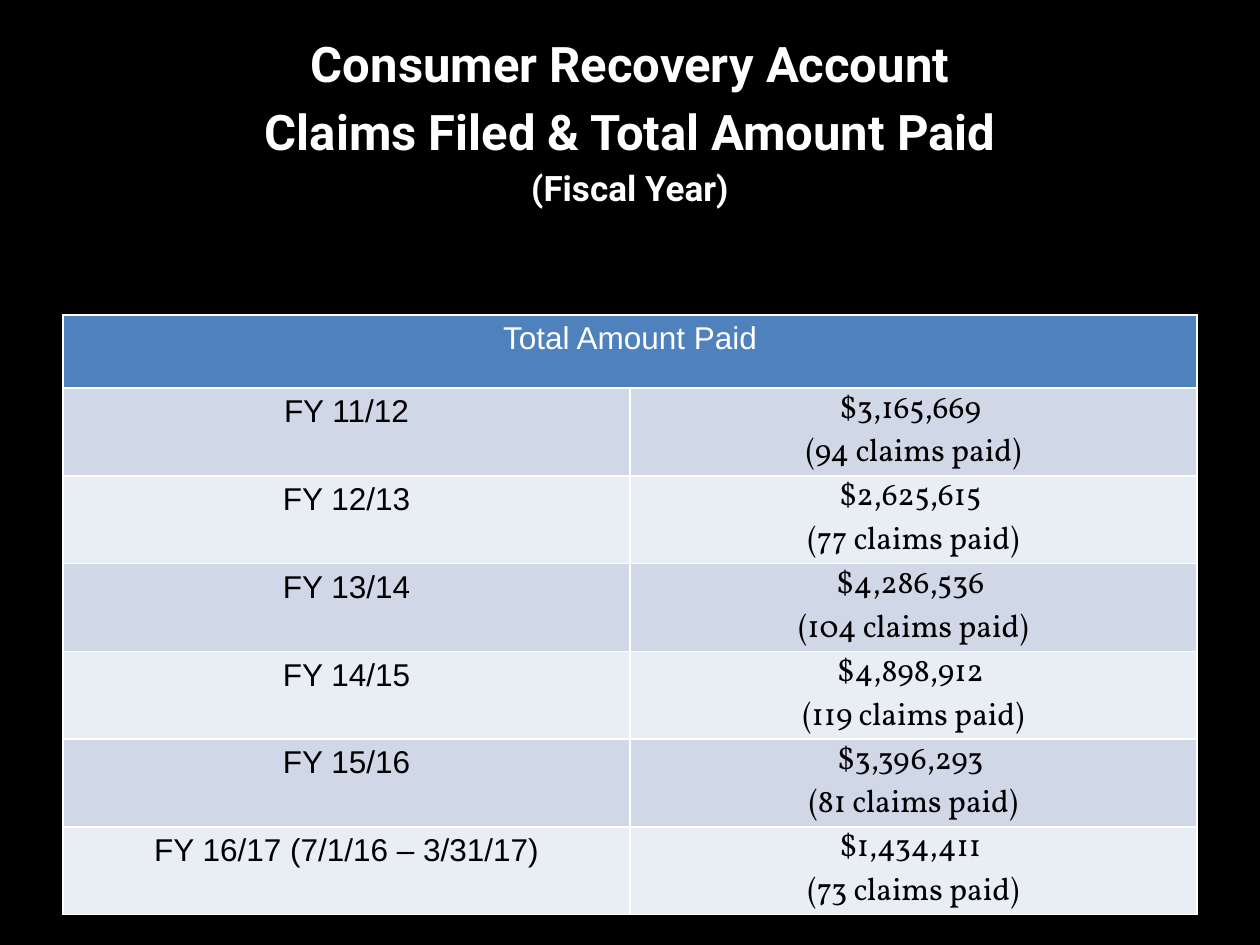
from lxml.etree import SubElement
from pptx import Presentation
from pptx.dml.color import RGBColor
from pptx.enum.text import MSO_ANCHOR, MSO_AUTO_SIZE, PP_ALIGN
from pptx.oxml.ns import qn
from pptx.util import Inches, Pt

WHITE, BLACK, BLUE = "FFFFFF", "000000", "4F81BD"
BANDS = ("D0D8E8", "E9EDF4")
HEAD = {"name": "Roboto", "size": Pt(28), "bold": True}
SUB = {**HEAD, "size": Pt(20)}
LABEL = {"name": "Arial", "size": Pt(18), "bold": False}
VALUE = {**LABEL, "name": "Vollkorn"}
WIDE = (0.1, 0.05)
TIGHT = (0.07, 0)
YEARS = [
    ("FY 11/12", "$3,165,669", 94),
    ("FY 12/13", "$2,625,615", 77),
    ("FY 13/14", "$4,286,536", 104),
    ("FY 14/15", "$4,898,912", 119),
    ("FY 15/16", "$3,396,293", 81),
    ("FY 16/17 (7/1/16 – 3/31/17)", "$1,434,411", 73),
]


def paint(color, shade):
    """Set a fill or font colour format to a hex string."""
    color.rgb = RGBColor.from_string(shade)


def style(font, look, shade):
    """Apply a dict of font values and a colour."""
    for key, value in look.items():
        setattr(font, key, value)
    paint(font.color, shade)


def edge(cell):
    """Draw thin white borders round a cell."""
    props = cell._tc.get_or_add_tcPr()
    for side in "LRTB":
        line = SubElement(props, qn(f"a:ln{side}"), w=str(Pt(1)))
        fill = SubElement(line, qn("a:solidFill"))
        SubElement(fill, qn("a:srgbClr"), val=WHITE)


def write(cell, lines, look, shade, fill, pad):
    """Fill one cell with centred lines of text."""
    edge(cell)
    cell.fill.solid()
    paint(cell.fill.fore_color, fill)
    cell.margin_left = cell.margin_right = Inches(pad[0])
    cell.margin_top = cell.margin_bottom = Inches(pad[1])
    cell.text_frame.text = "\n".join(lines)
    for para in cell.text_frame.paragraphs:
        para.alignment = PP_ALIGN.CENTER
        for run in para.runs:
            style(run.font, look, shade)


def add_title(slide, left, top, width, height):
    """Place the three-line heading in the title placeholder."""
    title = slide.shapes.title
    title.left, title.top = Inches(left), Inches(top)
    title.width, title.height = Inches(width), Inches(height)
    frame = title.text_frame
    frame.word_wrap = True
    frame.auto_size = MSO_AUTO_SIZE.SHAPE_TO_FIT_TEXT
    frame.vertical_anchor = MSO_ANCHOR.MIDDLE
    para = frame.paragraphs[0]
    para.alignment = PP_ALIGN.CENTER
    para.line_spacing, para.space_after = 1.15, Pt(10)
    lines = [
        ("Consumer Recovery Account", HEAD),
        ("Claims Filed & Total Amount Paid", HEAD),
        ("(Fiscal Year)", SUB),
    ]
    for index, (text, look) in enumerate(lines):
        if index:
            para.add_line_break()
        run = para.add_run()
        run.text = text
        style(run.font, look, WHITE)


def add_claims(slide, left, top, width, height):
    """Place the table of yearly amounts and claims paid."""
    box = [Inches(size) for size in (left, top, width, height)]
    table = slide.shapes.add_table(len(YEARS) + 1, 2, *box).table
    first, *rest = table.rows
    first.height = Inches(0.58)
    for row in rest:
        row.height = Inches((height - 0.58) / len(rest))
    head = table.cell(0, 0)
    head.merge(table.cell(0, 1))
    write(head, ["Total Amount Paid"], LABEL, WHITE, BLUE, WIDE)
    for index, (year, paid, count) in enumerate(YEARS):
        band = BANDS[index % 2]
        name, value = rest[index].cells
        write(name, [year], LABEL, BLACK, band, WIDE)
        lines = [f"{paid} ", f"({count} claims paid)"]
        write(value, lines, VALUE, BLACK, band, TIGHT)


def main():
    """Build and save the slide."""
    deck = Presentation()
    deck.slide_width, deck.slide_height = Inches(10), Inches(7.5)
    slide = deck.slides.add_slide(deck.slide_layouts[5])
    slide.background.fill.solid()
    paint(slide.background.fill.fore_color, BLACK)
    add_title(slide, 0.5, 0.3, 9, 1.25)
    add_claims(slide, 0.5, 2.5, 9, 4.76)
    deck.save("out.pptx")


if __name__ == "__main__":
    main()
